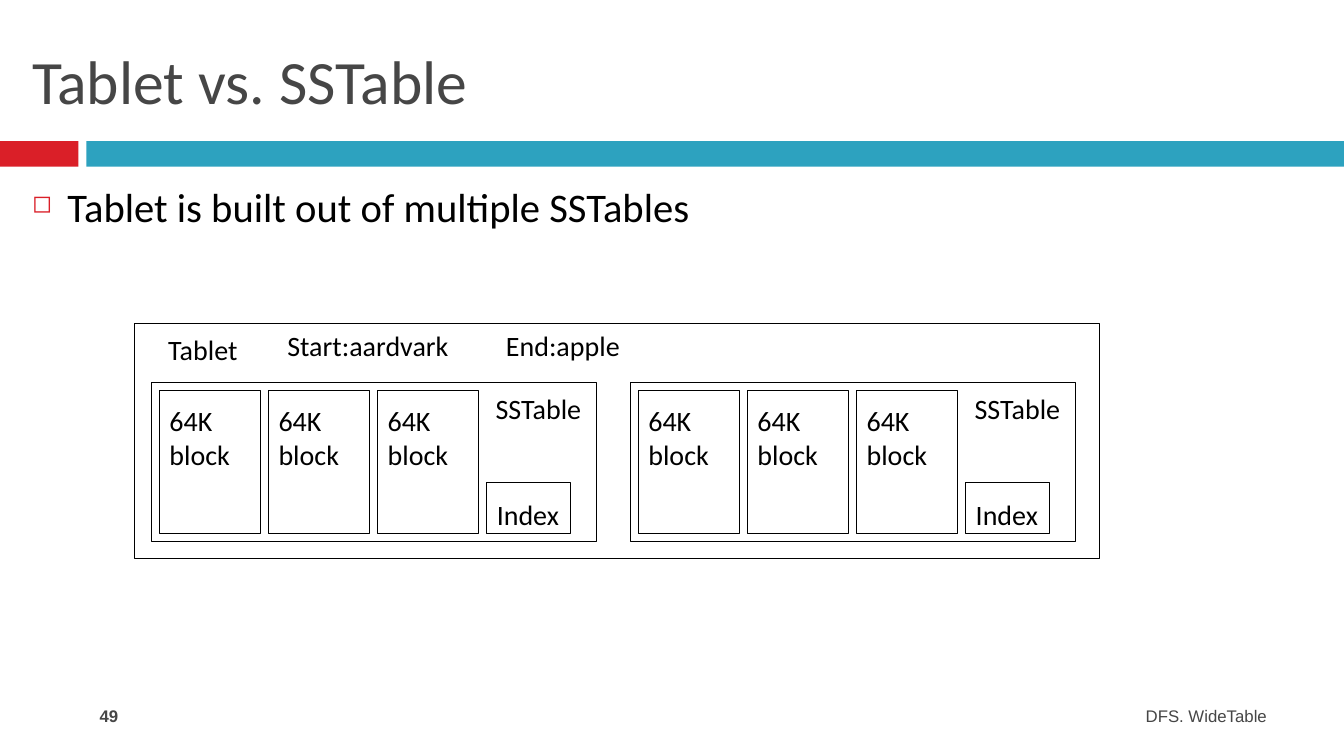
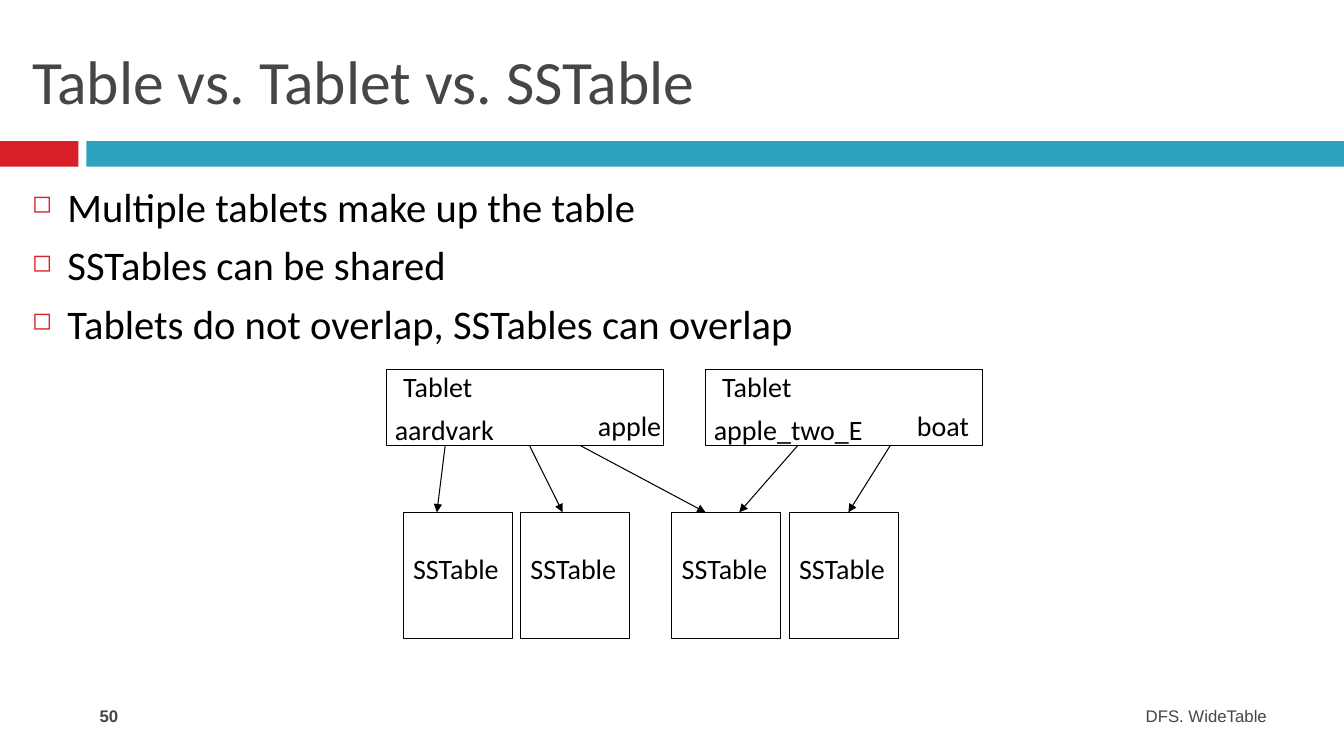
from lxml.etree import SubElement
from pptx import Presentation
from pptx.dml.color import RGBColor
from pptx.enum.shapes import MSO_CONNECTOR, MSO_SHAPE
from pptx.enum.text import MSO_ANCHOR, PP_ALIGN
from pptx.oxml.ns import qn
from pptx.util import Cm, Pt

COLORS = {"red": "DA1F28", "blue": "2DA2BF", "grey": "464646", "black": "000000"}
FOOTER = "DFS. WideTable"
SLIDES = [
    ("Tablet vs. SSTable", 49, ["Tablet is built out of multiple SSTables"]),
    ("Table vs. Tablet vs. SSTable", 50, [
        "Multiple tablets make up the table",
        "SSTables can be shared",
        "Tablets do not overlap, SSTables can overlap",
    ]),
]


def write(shape, text, size=20, color="black", font="Calibri", bold=False,
          align=PP_ALIGN.LEFT, anchor=MSO_ANCHOR.TOP):
    """Fill a shape with wrapped text, one paragraph per line, in one style."""
    frame = shape.text_frame
    frame.text = text
    frame.word_wrap = True
    frame.vertical_anchor = anchor
    for paragraph in frame.paragraphs:
        paragraph.alignment = align
        for run in paragraph.runs:
            run.font.size = Pt(size)
            run.font.name = font
            run.font.bold = bold
            run.font.color.rgb = RGBColor.from_string(COLORS[color])


def add_outline(slide, left, top, width, height, text="", text_top=0):
    """Add an unfilled rectangle whose text starts text_top cm below its top."""
    shape = slide.shapes.add_shape(
        MSO_SHAPE.RECTANGLE, Cm(left), Cm(top), Cm(width), Cm(height))
    shape.shadow.inherit = False
    shape.fill.background()
    shape.line.color.rgb = RGBColor.from_string(COLORS["black"])
    shape.line.width = Pt(0.75)
    if text:
        write(shape, text)
        shape.text_frame.margin_top = Cm(text_top)
        shape.text_frame.margin_right = 0


presentation = Presentation()
presentation.slide_width = Cm(33.87)
presentation.slide_height = Cm(19.05)
layout = presentation.slide_layouts[5]

# Titles, bullets and footers
for title_text, number, bullets in SLIDES:
    slide = presentation.slides.add_slide(layout)
    title = slide.shapes.title
    title.left, title.top, title.width, title.height = Cm(0.56), Cm(0.64), Cm(32.74), Cm(2.74)
    write(title, title_text, 44, "grey", anchor=MSO_ANCHOR.MIDDLE)

    body = slide.shapes.add_textbox(Cm(0.56), Cm(4.45), Cm(32.74), Cm(5))
    write(body, "\n".join(bullets), 29)
    for paragraph in body.text_frame.paragraphs:
        paragraph.space_before = Pt(7)
        properties = paragraph._p.get_or_add_pPr()
        properties.set("marL", str(Cm(0.89)))
        properties.set("indent", str(-Cm(0.89)))
        bullet_color = SubElement(properties, qn("a:buClr"))
        SubElement(bullet_color, qn("a:srgbClr"), val=COLORS["red"])
        SubElement(properties, qn("a:buSzPct"), val="60000")
        SubElement(properties, qn("a:buChar"), char="◻")

    footer = slide.shapes.add_textbox(Cm(19.2), Cm(17.65), Cm(12.98), Cm(1.02))
    write(footer, FOOTER, 12, "grey", "Arial", align=PP_ALIGN.RIGHT)
    page_number = slide.shapes.add_textbox(Cm(2.26), Cm(17.65), Cm(7.34), Cm(1.02))
    write(page_number, str(number), 12, "grey", "Arial", bold=True)

tablet_slide, table_slide = presentation.slides

# Bands are drawn once and moved to the shared layout
for left, width, color in [(0, 1.98, "red"), (2.18, 31.69, "blue")]:
    band = tablet_slide.shapes.add_shape(
        MSO_SHAPE.RECTANGLE, Cm(left), Cm(3.56), Cm(width), Cm(0.64))
    band.shadow.inherit = False
    band.fill.solid()
    band.fill.fore_color.rgb = RGBColor.from_string(COLORS[color])
    band.line.fill.background()
    layout.placeholders[0].element.addprevious(band.element)

# A tablet holding two SSTables
labels = [
    (tablet_slide, "Tablet", 3.99, 8.26),
    (tablet_slide, "Start:aardvark", 6.99, 8.15),
    (tablet_slide, "End:apple", 12.5, 8.15),
]
add_outline(tablet_slide, 3.39, 8.15, 24.33, 5.93)
for sstable_left in (3.81, 15.88):
    add_outline(tablet_slide, sstable_left, 9.63, 11.23, 4.02)
    for block in range(3):
        add_outline(tablet_slide, sstable_left + 0.21 + block * 2.75, 9.84, 2.54, 3.6,
                    "64K block", 0.34)
    add_outline(tablet_slide, sstable_left + 8.46, 12.17, 2.12, 1.27, "Index", 0.36)
    labels.append((tablet_slide, "SSTable", sstable_left + 8.43, 9.73))

# Two tablets sharing four SSTables
for pair_left in (10.16, 16.93):
    for position in range(2):
        add_outline(table_slide, pair_left + position * 2.96, 12.91, 2.75, 3.18,
                    "SSTable", 0.98)

for tablet_left, first_key, last_key in [(9.74, "aardvark", "apple"),
                                         (17.78, "apple_two_E", "boat")]:
    add_outline(table_slide, tablet_left, 9.31, 6.99, 1.91)
    labels += [
        (table_slide, "Tablet", tablet_left + 0.17, 9.19),
        (table_slide, first_key, tablet_left - 0.04, 10.26),
        (table_slide, last_key, tablet_left + 5.08, 10.16),
    ]

for start, end in [(11.22, 11.01), (13.34, 14.18), (14.61, 17.78),
                   (20.11, 18.63), (22.44, 21.38)]:
    arrow = table_slide.shapes.add_connector(
        MSO_CONNECTOR.STRAIGHT, Cm(start), Cm(11.22), Cm(end), Cm(12.91))
    arrow.line.color.rgb = RGBColor.from_string(COLORS["black"])
    arrow.line.width = Pt(0.75)
    SubElement(arrow.line._get_or_add_ln(), qn("a:tailEnd"), type="triangle")
    SubElement(arrow._element.spPr, qn("a:effectLst"))

for slide, text, left, top in labels:
    label = slide.shapes.add_textbox(Cm(left), Cm(top), Cm(5), Cm(1.12))
    write(label, text)

presentation.save("out.pptx")
